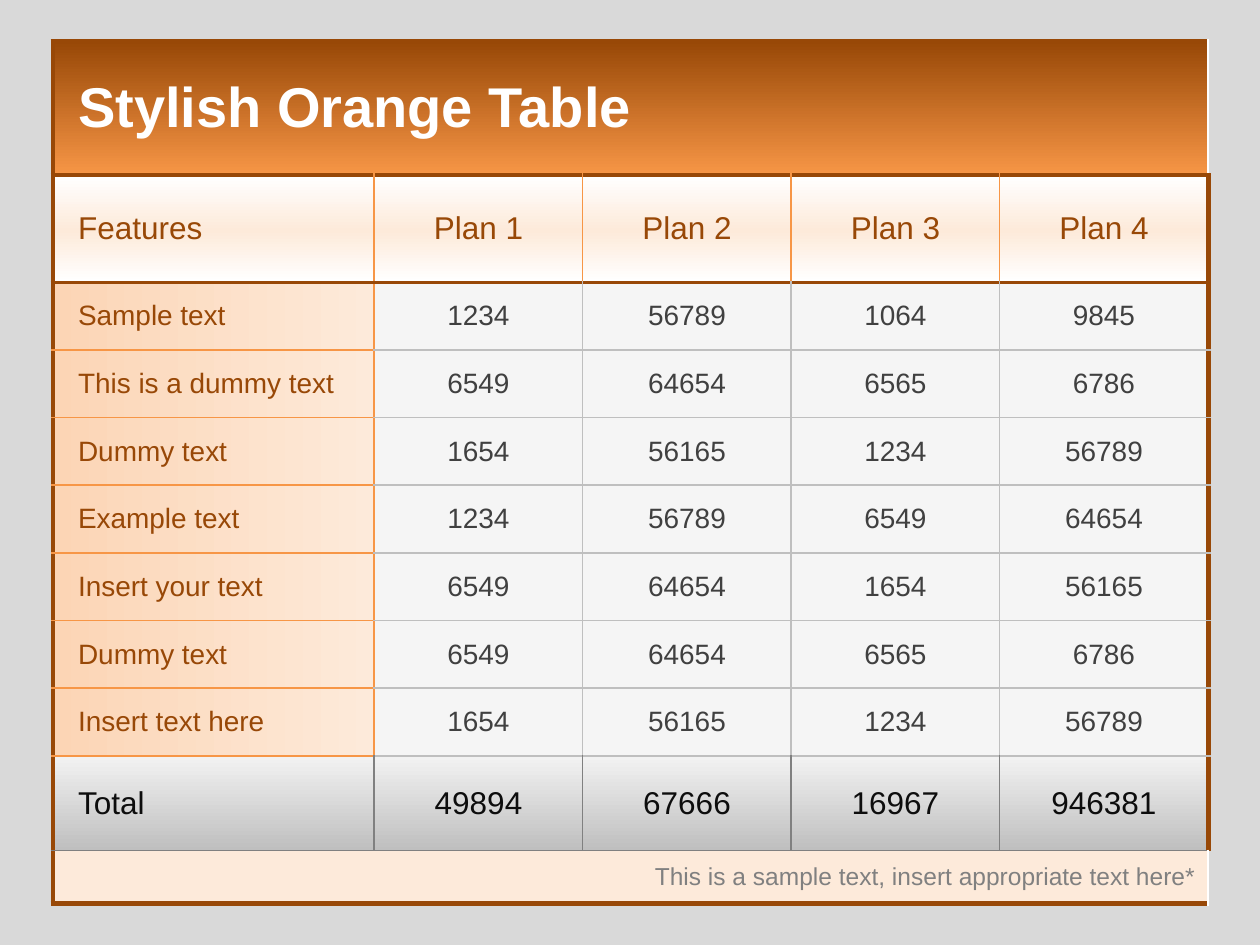
from lxml import etree
from pptx import Presentation
from pptx.dml.color import RGBColor
from pptx.enum.text import MSO_ANCHOR as Anchor, PP_ALIGN as Align
from pptx.oxml.ns import qn
from pptx.util import Inches, Pt

BROWN, ORANGE = "984807", "F79646"
GRAY, SILVER = "808080", "BFBFBF"
OUTER, RULE = (BROWN, 3), (BROWN, 2.25)
ORANGE_LINE, GRAY_LINE, SILVER_LINE = (ORANGE, 1), (GRAY, 1), (SILVER, 1)

# A gradient is (angle, [(position, colour), ...]); a solid fill is a hex string.
TITLE_FILL = (90, [(0, BROWN), (100, ORANGE)])
HEADER_FILL = (90, [(0, "FFFFFF"), (52, "FDEADA"), (100, "FFFFFF")])
LABEL_FILL = (0, [(0, "FCD5B5"), (100, "FDEADA")])
TOTAL_FILL = (270, [(0, SILVER), (100, "F2F2F2")])

TITLE = "Stylish Orange Table"
HEADER = ["Features", "Plan 1", "Plan 2", "Plan 3", "Plan 4"]
BODY = [
    ["Sample text", "1234", "56789", "1064", "9845"],
    ["This is a dummy text", "6549", "64654", "6565", "6786"],
    ["Dummy text", "1654", "56165", "1234", "56789"],
    ["Example text", "1234", "56789", "6549", "64654"],
    ["Insert your text", "6549", "64654", "1654", "56165"],
    ["Dummy text", "6549", "64654", "6565", "6786"],
    ["Insert text here", "1654", "56165", "1234", "56789"],
]
TOTAL = ["Total", "49894", "67666", "16967", "946381"]
FOOTNOTE = "This is a sample text, insert appropriate text here*"


def rgb(color):
    return RGBColor.from_string(color)


def add_color(parent, color):
    etree.SubElement(parent, qn("a:srgbClr"), val=color)


def set_borders(cell, left, right, top, bottom):
    """Draw each side given as (colour, points); None leaves a side alone."""
    properties = cell._tc.get_or_add_tcPr()
    for side, border in zip("LRTB", (left, right, top, bottom)):
        if border:
            color, points = border
            line = etree.SubElement(properties, qn(f"a:ln{side}"), w=str(Pt(points)))
            add_color(etree.SubElement(line, qn("a:solidFill")), color)


def set_fill(cell, fill):
    if isinstance(fill, str):
        cell.fill.solid()
        cell.fill.fore_color.rgb = rgb(fill)
        return
    angle, stops = fill
    gradient = etree.SubElement(cell._tc.get_or_add_tcPr(), qn("a:gradFill"), rotWithShape="1")
    stop_list = etree.SubElement(gradient, qn("a:gsLst"))
    for position, color in stops:
        add_color(etree.SubElement(stop_list, qn("a:gs"), pos=str(position * 1000)), color)
    etree.SubElement(gradient, qn("a:lin"), ang=str(angle * 60000), scaled="0")


def set_text(cell, text, size, color, align=Align.CENTER, bold=False):
    cell.vertical_anchor = Anchor.MIDDLE
    if align == Align.LEFT:
        cell.margin_left = Inches(0.2)
    cell.text_frame.text = text
    paragraph = cell.text_frame.paragraphs[0]
    paragraph.alignment = align
    font = paragraph.runs[0].font
    font.name, font.size, font.bold = "Arial", Pt(size), bold
    font.color.rgb = rgb(color)


def fill_merged_row(table, row, text, fill, top, bottom, **text_format):
    last = len(table.columns) - 1
    for column in range(last + 1):
        cell = table.cell(row, column)
        set_borders(cell, OUTER if column == 0 else None,
                    OUTER if column == last else None, top, bottom)
        set_fill(cell, fill)
    table.cell(row, 0).merge(table.cell(row, last))
    set_text(table.cell(row, 0), text, **text_format)


def fill_row(table, row, texts, size, colors, fills, dividers, tops, bottoms):
    """Fill a row; each pair holds the label column's value, then the value columns'."""
    last = len(texts) - 1
    for column, text in enumerate(texts):
        kind = min(column, 1)
        cell = table.cell(row, column)
        left = OUTER if column == 0 else dividers[min(column - 1, 1)]
        right = OUTER if column == last else dividers[kind]
        set_borders(cell, left, right, tops[kind], bottoms[kind])
        set_fill(cell, fills[kind])
        set_text(cell, text, size, colors[kind], Align.CENTER if kind else Align.LEFT)


def add_plan_table(slide, left, top, width, height):
    row_count, column_count = len(BODY) + 4, len(HEADER)
    table = slide.shapes.add_table(row_count, column_count, left, top, width, height).table
    table.first_row = table.horz_banding = False

    label_width = Inches(2.55)
    plan_width = (width - label_width) // (column_count - 1)
    for index, column in enumerate(table.columns):
        column.width = plan_width if index else label_width

    title, header, total, footer = (Inches(value) for value in (1.06, 0.85, 0.75, 0.42))
    body = (height - title - header - total - footer) // len(BODY)
    row_heights = [title, header] + [body] * len(BODY) + [total, footer]
    for row, row_height in zip(table.rows, row_heights):
        row.height = row_height

    body_lines = (ORANGE_LINE, SILVER_LINE)
    heavy_lines = (RULE, RULE)
    fill_merged_row(table, 0, TITLE, TITLE_FILL, OUTER, RULE,
                    size=32, color="FFFFFF", align=Align.LEFT, bold=True)
    fill_row(table, 1, HEADER, 18, (BROWN, BROWN), (HEADER_FILL, HEADER_FILL),
             (ORANGE_LINE, ORANGE_LINE), heavy_lines, heavy_lines)
    for index, texts in enumerate(BODY):
        fill_row(table, index + 2, texts, 16, (BROWN, "404040"), (LABEL_FILL, "F5F5F5"),
                 body_lines, body_lines if index else heavy_lines, body_lines)
    fill_row(table, row_count - 2, TOTAL, 18, ("0D0D0D", "0D0D0D"), (TOTAL_FILL, TOTAL_FILL),
             (GRAY_LINE, GRAY_LINE), body_lines, (GRAY_LINE, GRAY_LINE))
    fill_merged_row(table, row_count - 1, FOOTNOTE, "FDEADA", GRAY_LINE, OUTER,
                    size=14, color=GRAY, align=Align.RIGHT)


def main():
    presentation = Presentation()
    presentation.slide_width, presentation.slide_height = Inches(10), Inches(7.5)
    slide = presentation.slides.add_slide(presentation.slide_layouts[6])
    slide.background.fill.solid()
    slide.background.fill.fore_color.rgb = rgb("D9D9D9")
    add_plan_table(slide, Inches(0.42), Inches(0.33), Inches(9.17), Inches(6.84))
    presentation.save("out.pptx")


if __name__ == "__main__":
    main()
